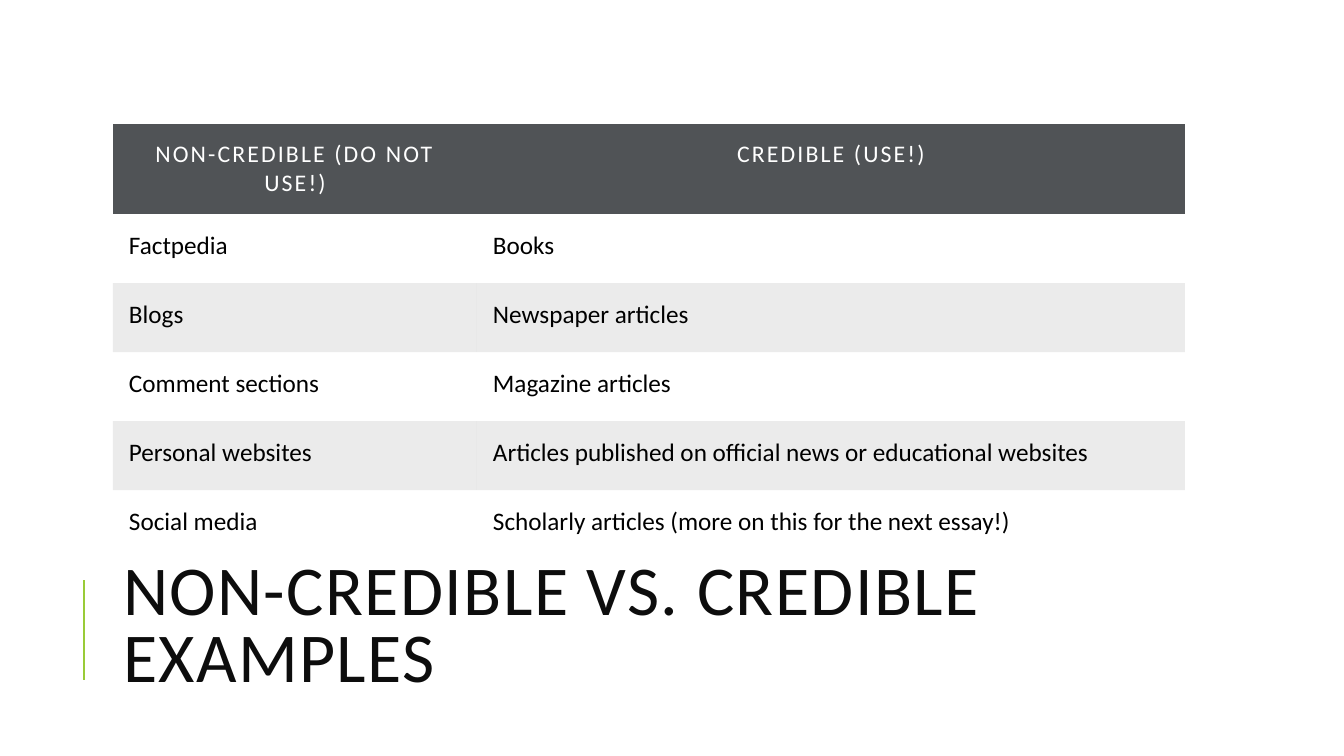
import pptx
import pptx.util
import pptx.dml.color
import pptx.enum.shapes
import pptx.enum.text
import pptx.oxml.ns
import lxml.etree

PX = 914400 / 100.8
COLOURS = {
    "title": "0D0D0D",
    "accent": "99CB38",
    "header": "505356",
    "header text": "FFFFFF",
    "body text": "000000",
    "band": "000000",
}
FONT = "Calibri"
NO_STYLE_NO_GRID = "{2D5ABB26-0587-4C30-8999-92F81FD0307C}"
ROWS = [
    ("NON-CREDIBLE (DO NOT USE!)", "CREDIBLE (USE!)"),
    ("Factpedia", "Books"),
    ("Blogs", "Newspaper articles"),
    ("Comment sections", "Magazine articles"),
    ("Personal websites", "Articles published on official news or educational websites"),
    ("Social media", "Scholarly articles (more on this for the next essay!)"),
]
COLUMN_WIDTHS = [364, 708]
ROW_HEIGHTS = [76] + [69] * 5


def px(length):
    return pptx.util.Emu(round(length * PX))


def add_span(para, text, size, colour, spacing):
    span = para.add_run()
    span.text = text
    span.font.name = FONT
    span.font.size = pptx.util.Pt(size)
    span.font.bold = False
    span.font.color.rgb = pptx.dml.color.RGBColor.from_string(COLOURS[colour])
    span.font._element.set("spc", str(round(spacing * 100)))


deck = pptx.Presentation()
deck.slide_width, deck.slide_height = px(1344), px(756)
page = deck.slides.add_slide(deck.slide_layouts[5])

title = page.shapes.title
title.left, title.top, title.width, title.height = px(113), px(546), px(1072), px(165)
title.text_frame.word_wrap = True
title.text_frame.auto_size = pptx.enum.text.MSO_AUTO_SIZE.NONE
title.text_frame.vertical_anchor = pptx.enum.text.MSO_ANCHOR.MIDDLE
para = title.text_frame.paragraphs[0]
para.alignment = pptx.enum.text.PP_ALIGN.LEFT
para.line_spacing = 0.8
add_span(para, "NON-CREDIBLE VS. CREDIBLE EXAMPLES", 50, "title", 1)

rule = page.shapes.add_connector(
    pptx.enum.shapes.MSO_CONNECTOR.STRAIGHT, px(84), px(680), px(84), px(580)
)
rule.line.color.rgb = pptx.dml.color.RGBColor.from_string(COLOURS["accent"])
rule.line.width = pptx.util.Pt(1.5)
lxml.etree.SubElement(rule._element.spPr, pptx.oxml.ns.qn("a:effectLst"))

frame = page.shapes.add_table(
    len(ROWS), len(COLUMN_WIDTHS), px(113), px(124), px(sum(COLUMN_WIDTHS)), px(sum(ROW_HEIGHTS))
)
table = frame.table
table.horz_banding = False
table._tbl.tblPr.find(pptx.oxml.ns.qn("a:tableStyleId")).text = NO_STYLE_NO_GRID
for column, width in zip(table.columns, COLUMN_WIDTHS):
    column.width = px(width)

for row_index, texts in enumerate(ROWS):
    table.rows[row_index].height = px(ROW_HEIGHTS[row_index])
    for column_index, text in enumerate(texts):
        cell = table.cell(row_index, column_index)
        cell.margin_left = cell.margin_right = px(16)
        cell.margin_top = cell.margin_bottom = px(16)
        para = cell.text_frame.paragraphs[0]
        if row_index == 0:
            cell.fill.solid()
            cell.fill.fore_color.rgb = pptx.dml.color.RGBColor.from_string(COLOURS["header"])
            para.alignment = pptx.enum.text.PP_ALIGN.CENTER
            add_span(para, text, 17, "header text", 1.5)
            continue
        add_span(para, text, 18, "body text", 0)
        if row_index % 2:
            cell.fill.background()
        else:
            cell.fill.solid()
            cell.fill.fore_color.rgb = pptx.dml.color.RGBColor.from_string(COLOURS["band"])
            tint = cell._tc.tcPr.find(".//" + pptx.oxml.ns.qn("a:srgbClr"))
            lxml.etree.SubElement(tint, pptx.oxml.ns.qn("a:alpha"), val="8000")

deck.save("out.pptx")
